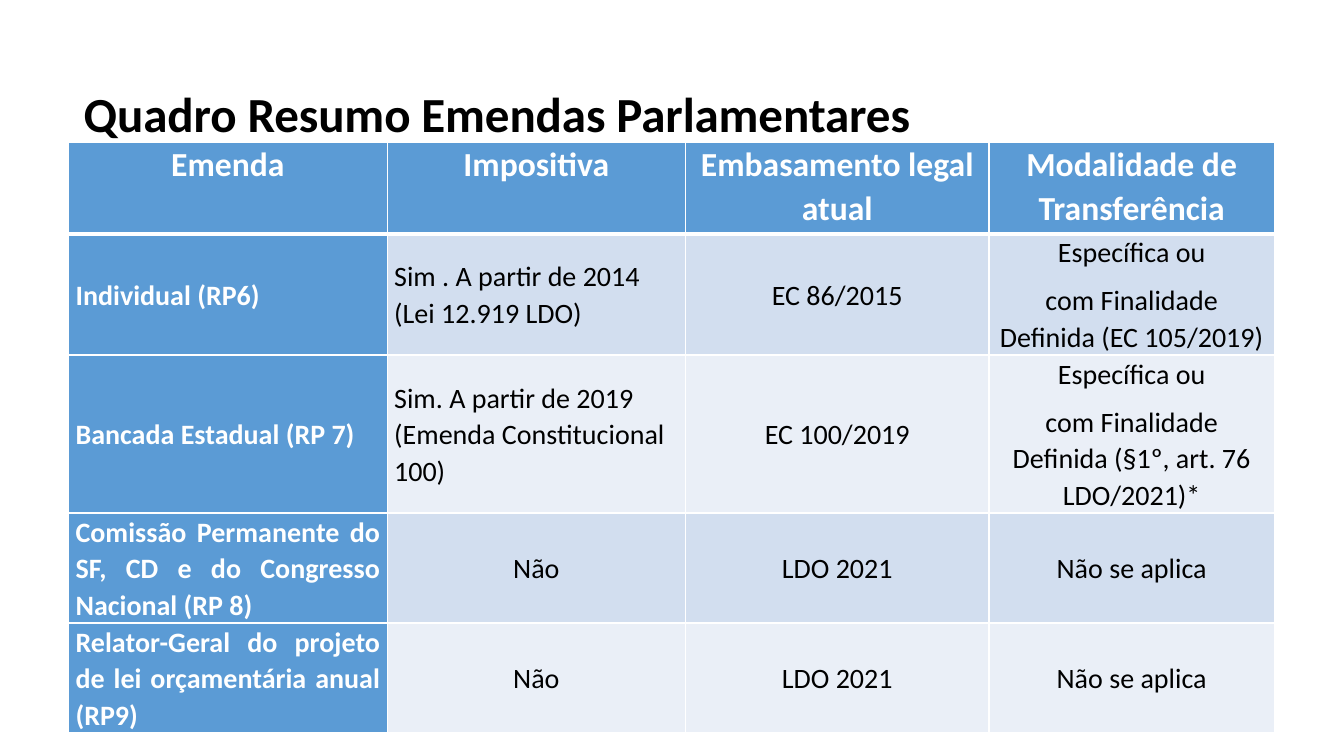
from lxml import etree
from pptx import Presentation
from pptx.dml.color import RGBColor
from pptx.enum import text
from pptx.oxml import ns
from pptx.util import Inches, Pt

COLORS = {"header": "5B9BD5", "band_dark": "D2DEEF", "band_light": "EAEFF7",
          "white": "FFFFFF", "black": "000000"}
FONT = "Calibri"
LEFT, CENTER, JUSTIFY = text.PP_ALIGN.LEFT, text.PP_ALIGN.CENTER, text.PP_ALIGN.JUSTIFY


def style_run(r, size, color, bold):
    r.font.name = FONT
    r.font.size = Pt(size)
    r.font.bold = bold
    r.font.color.rgb = RGBColor.from_string(COLORS[color])


def set_borders(cell, bottom_width):
    tc_pr = cell._tc.get_or_add_tcPr()
    widths = {"lnL": 1, "lnR": 1, "lnT": 1, "lnB": bottom_width}
    for i, (side, width) in enumerate(widths.items()):
        ln = etree.Element(ns.qn("a:" + side), w=str(Pt(width)))
        fill = etree.SubElement(ln, ns.qn("a:solidFill"))
        etree.SubElement(fill, ns.qn("a:srgbClr"), val=COLORS["white"])
        tc_pr.insert(i, ln)


prs = Presentation()
prs.slide_width, prs.slide_height = Inches(13.33), Inches(7.5)
s = prs.slides.add_slide(prs.slide_layouts[6])

# Summary table
rows = [
    ["Emenda", "Impositiva", "Embasamento legal atual", "Modalidade de Transferência"],
    ["Individual (RP6)", "Sim . A partir de 2014 (Lei 12.919 LDO)", "EC 86/2015",
     "Específica ou\ncom Finalidade Definida (EC 105/2019)"],
    ["Bancada Estadual (RP 7)", "Sim. A partir de 2019 (Emenda Constitucional 100)",
     "EC 100/2019", "Específica ou\ncom Finalidade Definida (§1º, art. 76 LDO/2021)*"],
    ["Comissão Permanente do SF, CD e do Congresso Nacional (RP 8)", "Não",
     "LDO 2021", "Não se aplica"],
    ["Relator-Geral do projeto de lei orçamentária anual (RP9)", "Não",
     "LDO 2021", "Não se aplica"],
]
aligns = [[CENTER] * 4] + [[LEFT, LEFT, CENTER, CENTER]] * 2 + [[JUSTIFY] + [CENTER] * 3] * 2
col_widths = [3.16, 2.96, 3.01, 2.83]
row_heights = [0.91, 1.15, 1.15, 1.03, 1.03]

table = s.shapes.add_table(len(rows), len(col_widths), Inches(0.68), Inches(1.41),
                           Inches(sum(col_widths)), Inches(sum(row_heights))).table
table.first_col = True
for column, width in zip(table.columns, col_widths):
    column.width = Inches(width)
for row, height in zip(table.rows, row_heights):
    row.height = Inches(height)

for i, row in enumerate(rows):
    for j, content in enumerate(row):
        cell = table.cell(i, j)
        is_head = i == 0 or j == 0
        band = "band_dark" if i % 2 else "band_light"
        cell.fill.solid()
        cell.fill.fore_color.rgb = RGBColor.from_string(COLORS["header" if is_head else band])
        set_borders(cell, 3 if i == 0 else 1)
        cell.margin_left = cell.margin_right = Inches(0.07)
        cell.margin_top = cell.margin_bottom = 0
        cell.vertical_anchor = text.MSO_ANCHOR.MIDDLE if i else text.MSO_ANCHOR.TOP
        cell.text_frame.text = content
        for p in cell.text_frame.paragraphs:
            p.alignment = aligns[i][j]
            p.line_spacing = 1.07
            p.space_after = Pt(8)
            style_run(p.runs[0], 20 if i else 24, "white" if is_head else "black", is_head)

# Title
sp = s.shapes.add_textbox(Inches(0.82), Inches(0.83), Inches(10.37), Inches(0.59))
tf = sp.text_frame
tf.word_wrap = True
tf.margin_left = tf.margin_right = tf.margin_top = tf.margin_bottom = 0
tf.text = "Quadro Resumo Emendas Parlamentares"
p = tf.paragraphs[0]
p._p.get_or_add_pPr().set("marL", str(Inches(0.01)))
r = p.runs[0]
style_run(r, 35, "black", True)
r._r.get_or_add_rPr().set("spc", "-10")

prs.save("out.pptx")
